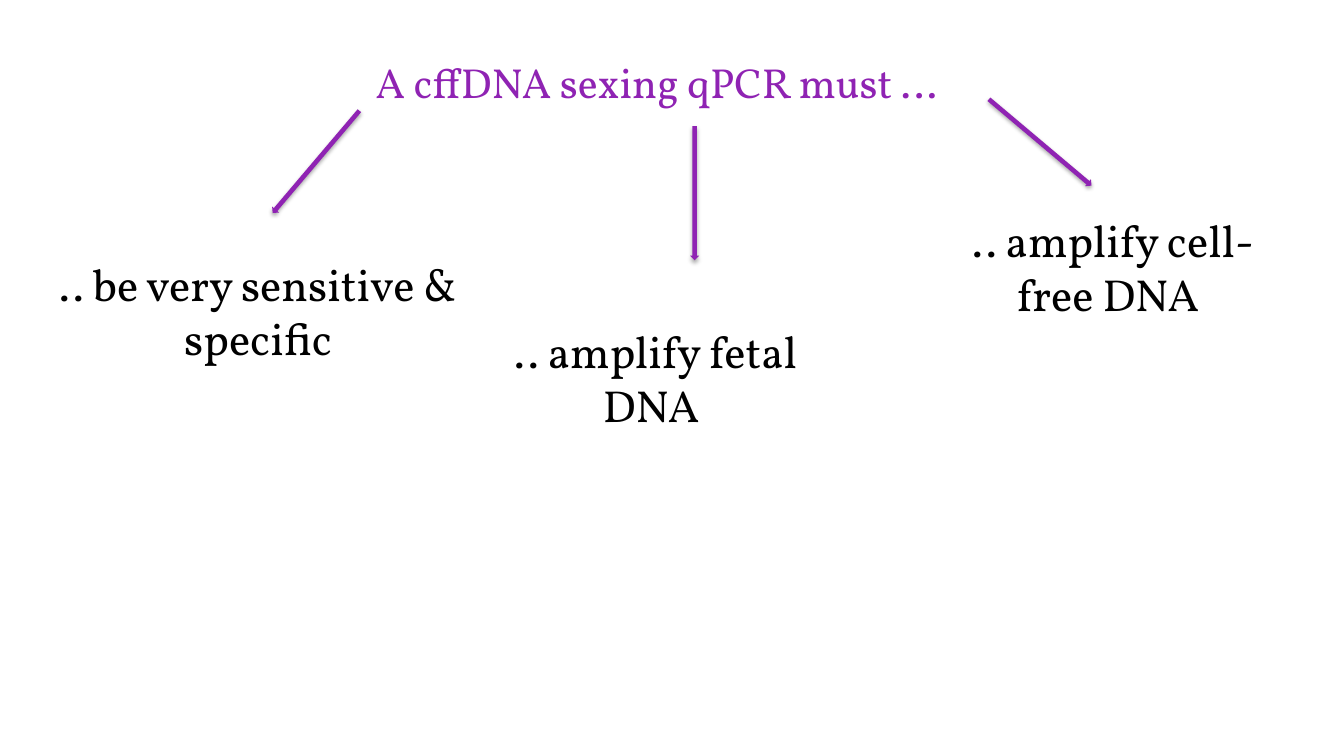
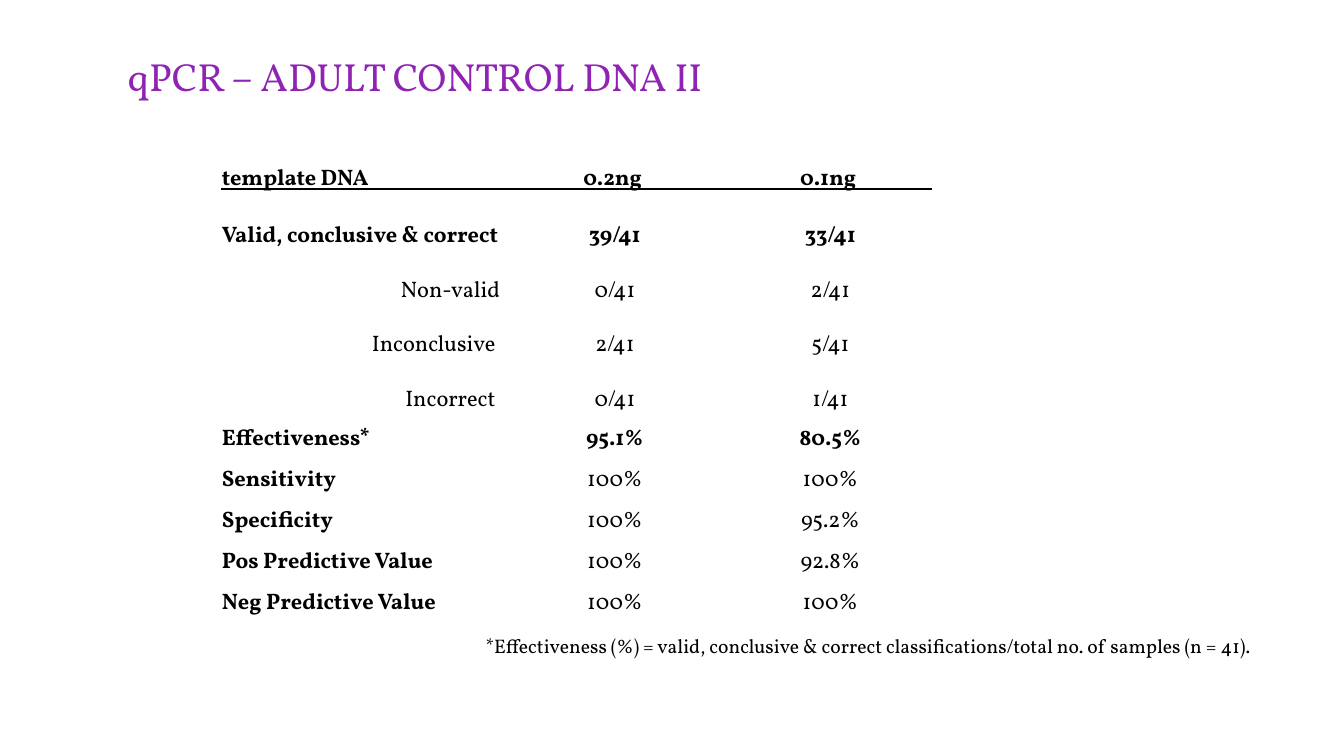
"""Build two slides on a qPCR sexing test: its requirements and its control results."""
import dataclasses

import lxml.etree
import pptx
import pptx.dml.color
import pptx.enum.shapes
import pptx.enum.text
import pptx.oxml.ns
import pptx.util

Cm = pptx.util.Cm
Pt = pptx.util.Pt
qn = pptx.oxml.ns.qn
ALIGN = pptx.enum.text.PP_ALIGN
ANCHOR = pptx.enum.text.MSO_ANCHOR


@dataclasses.dataclass(frozen=True)
class Theme:
    font: str = "Vollkorn"
    accent: str = "8F23B3"
    ink: str = "000000"
    lead_title_size: int = 30
    title_size: int = 28
    statement_size: int = 32
    table_size: int = 16
    note_size: int = 14
    rule_width: int = 2


theme = Theme()


def write(frame, text, size, color=theme.ink, align=ALIGN.LEFT, bold=False):
    frame.word_wrap = True
    para = frame.paragraphs[0]
    para.text = text
    para.alignment = align
    for span in para.runs:
        span.font.name = theme.font
        span.font.size = Pt(size)
        span.font.bold = bold
        span.font.color.rgb = pptx.dml.color.RGBColor.from_string(color)
    return para


def add_title(page, left, top, width, text, size):
    box = page.shapes.add_textbox(Cm(left), Cm(top), Cm(width), Cm(3.18))
    box.text_frame.vertical_anchor = ANCHOR.MIDDLE
    write(box.text_frame, text, size, theme.accent)


deck = pptx.Presentation()
deck.slide_width, deck.slide_height = Cm(33.87), Cm(19.05)
blank = deck.slide_layouts[6]

page = deck.slides.add_slide(blank)
add_title(page, 9.22, 0.48, 24, "A cffDNA sexing qPCR must …", theme.lead_title_size)

statements = [
    (1.12, 6.35, 10.77, ".. be very sensitive & specific"),
    (11.51, 8.03, 10.03, ".. amplify fetal DNA "),
    (24.18, 5.23, 7.72, ".. amplify cell- free DNA "),
]
for left, top, width, text in statements:
    box = page.shapes.add_textbox(Cm(left), Cm(top), Cm(width), Cm(3))
    write(box.text_frame, text, theme.statement_size, align=ALIGN.CENTER)

for left, top, rotation in [(7.85, 2.39, 40.3), (17.39, 3.18, 0), (26.1, 1.9, 310.1)]:
    arrow = page.shapes.add_shape(
        pptx.enum.shapes.MSO_SHAPE.DOWN_ARROW, Cm(left), Cm(top), Cm(0.23), Cm(3.38)
    )
    arrow.rotation = rotation
    arrow.fill.solid()
    arrow.fill.fore_color.rgb = pptx.dml.color.RGBColor.from_string(theme.accent)
    arrow.line.fill.background()
    arrow.shadow.inherit = False
    effects = arrow._element.spPr.find(qn("a:effectLst"))
    shadow = lxml.etree.SubElement(
        effects, qn("a:outerShdw"), blurRad=str(Pt(3.1)), dist=str(Pt(1.8)),
        dir="5400000", rotWithShape="0",
    )
    shade = lxml.etree.SubElement(shadow, qn("a:srgbClr"), val=theme.ink)
    lxml.etree.SubElement(shade, qn("a:alpha"), val="35000")

page = deck.slides.add_slide(blank)
add_title(page, 2.97, 0.33, 29.18, "qPCR – ADULT CONTROL DNA II", theme.title_size)

results = [
    ("template DNA", "0.2ng ", "0.1ng "),
    ("Valid, conclusive & correct", "39/41", "33/41"),
    ("Non-valid", "0/41", "2/41"),
    ("Inconclusive ", "2/41", "5/41"),
    ("Incorrect ", "0/41", "1/41"),
    ("Effectiveness*", "95.1%", "80.5%"),
    ("Sensitivity", "100%", "100%"),
    ("Specificity", "100%", "95.2%"),
    ("Pos Predictive Value", "100%", "92.8%"),
    ("Neg Predictive Value", "100%", "100%"),
]
count_rows = range(1, 5)
failure_rows = range(2, 5)
bold_rows = (0, 1, 5)
ruled_edges = {(0, "a:lnB"), (1, "a:lnT")}
column_widths = [7.05, 5.75, 5.11]
row_height = 0.81

table = page.shapes.add_table(
    len(results), len(column_widths), Cm(5.57), Cm(3.73),
    Cm(sum(column_widths)), Cm(row_height * len(results)),
).table
table.first_row = table.horz_banding = False
for column, width in zip(table.columns, column_widths):
    column.width = Cm(width)

for row_index, values in enumerate(results):
    table.rows[row_index].height = Cm(row_height)
    for column_index, text in enumerate(values):
        cell = table.cell(row_index, column_index)
        cell.margin_left = cell.margin_right = cell.margin_top = Cm(0.02)
        cell.margin_bottom = 0
        cell.vertical_anchor = ANCHOR.BOTTOM if row_index <= 5 else ANCHOR.MIDDLE
        is_label = column_index == 0
        is_failure = row_index in failure_rows
        align = ALIGN.CENTER
        if is_label:
            align = ALIGN.RIGHT if is_failure else ALIGN.LEFT
        bold = row_index in bold_rows or (is_label and not is_failure)
        para = write(cell.text_frame, text, theme.table_size, align=align, bold=bold)
        para.line_spacing = 2.0 if row_index in count_rows else 1.5
        for edge_name in ("a:lnL", "a:lnR", "a:lnT", "a:lnB"):
            edge = lxml.etree.SubElement(
                cell._tc.get_or_add_tcPr(), qn(edge_name), w=str(Pt(theme.rule_width))
            )
            if (row_index, edge_name) in ruled_edges:
                paint = lxml.etree.SubElement(edge, qn("a:solidFill"))
                lxml.etree.SubElement(paint, qn("a:srgbClr"), val=theme.ink)
            else:
                lxml.etree.SubElement(edge, qn("a:noFill"))
        cell.fill.background()

note = page.shapes.add_textbox(Cm(11.99), Cm(15.85), Cm(20.4), Cm(0.86))
write(
    note.text_frame,
    "*Effectiveness (%) = valid, conclusive & correct classifications/total no. of samples (n = 41).",
    theme.note_size,
)

deck.save("out.pptx")
